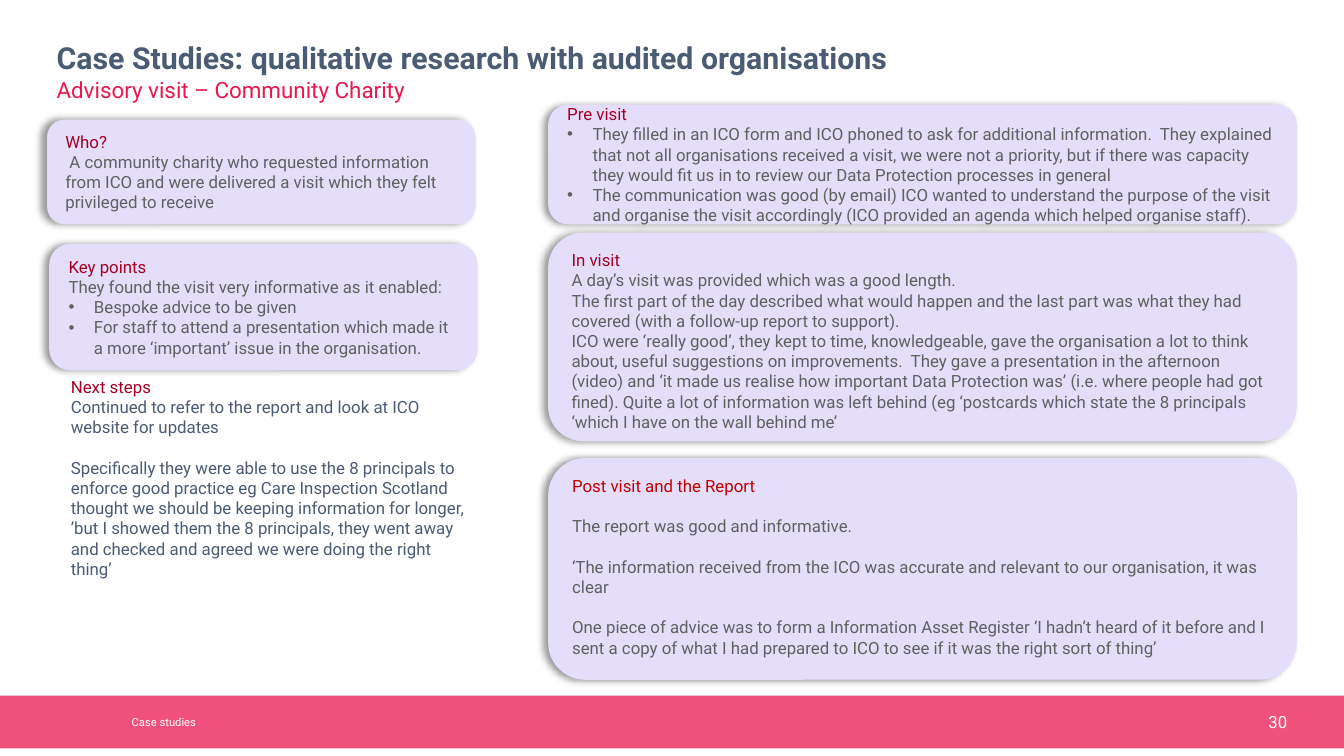
import pptx
import pptx.util
import pptx.dml.color
import pptx.enum.shapes
import pptx.enum.text
import pptx.oxml
import pptx.oxml.ns
from lxml import etree

Cm, Pt = pptx.util.Cm, pptx.util.Pt
RGB = pptx.dml.color.RGBColor
SHAPE = pptx.enum.shapes.MSO_SHAPE
ANCHOR = pptx.enum.text.MSO_ANCHOR
ALIGN = pptx.enum.text.PP_ALIGN
qn = pptx.oxml.ns.qn
NS = pptx.oxml.ns.nsdecls("a")

COLOURS = {
    "slate": "4A5B73",
    "pink": "EB174F",
    "crimson": "A50021",
    "red": "C00000",
    "grey": "606060",
    "lilac": "E4DEFB",
    "white": "FFFFFF",
}
SHADOW = (
    f'<a:effectLst {NS}><a:outerShdw blurRad="{Pt(4)}" dist="{Pt(3)}" dir="10800000" '
    'algn="r" rotWithShape="0"><a:srgbClr val="000000"><a:alpha val="40000"/>'
    "</a:srgbClr></a:outerShdw></a:effectLst>"
)
LINE_GAP = 10.8


def write(frame, text, colour="grey", size=9, bold=False, align=ALIGN.LEFT,
          bullet=False, gap=0, spacing=None):
    """Add one paragraph to the frame, using its empty first paragraph if there is one."""
    paragraph = frame.paragraphs[0] if not frame.text else frame.add_paragraph()
    paragraph.alignment = align
    if bullet:
        properties = paragraph._p.get_or_add_pPr()
        properties.set("marL", str(Cm(0.48)))
        properties.set("indent", str(-Cm(0.48)))
        etree.SubElement(properties, qn("a:buFont"), typeface="Arial")
        etree.SubElement(properties, qn("a:buChar"), char="•")
    if gap:
        paragraph.space_before = Pt(gap)
    if spacing:
        paragraph.line_spacing = spacing
    run = paragraph.add_run()
    run.text = text
    run.font.name = "Roboto"
    run.font.size = Pt(size)
    run.font.bold = bold
    run.font.color.rgb = RGB.from_string(COLOURS[colour])


def set_frame(frame, anchor, side=0.25, top=0.13):
    frame.word_wrap = True
    frame.auto_size = pptx.enum.text.MSO_AUTO_SIZE.NONE
    frame.vertical_anchor = anchor
    frame.margin_left = frame.margin_right = Cm(side)
    frame.margin_top = frame.margin_bottom = Cm(top)


deck = pptx.Presentation()
deck.slide_width, deck.slide_height = Cm(25.4), Cm(14.29)
slide = deck.slides.add_slide(deck.slide_layouts[5])

footer_band = slide.shapes.add_shape(SHAPE.RECTANGLE, 0, Cm(13.15), Cm(25.4), Cm(1))
footer_band.shadow.inherit = False
footer_band.line.fill.background()
footer_band.fill.solid()
footer_band.fill.fore_color.rgb = RGB.from_string(COLOURS["pink"])
band_colour = footer_band._element.spPr.find(".//" + qn("a:srgbClr"))
etree.SubElement(band_colour, qn("a:alpha"), val="75000")

title = slide.shapes.title
title.left, title.top, title.width, title.height = Cm(0.89), Cm(0.74), Cm(23.6), Cm(0.79)
set_frame(title.text_frame, ANCHOR.MIDDLE, 0.18, 0.1)
write(title.text_frame, "Case Studies: qualitative research with audited organisations",
      colour="slate", size=16.2, bold=True, spacing=0.9)

# Single lines: text, left, top, width, height, format
single_lines = [
    ("Advisory visit – Community Charity", 0.89, 1.35, 23.6, 0.76,
     {"colour": "pink", "size": 12, "spacing": 0.9}),
    ("Case studies", 2.31, 13.34, 20.19, 0.61, {"colour": "white", "size": 6}),
    ("30", 22.71, 13.34, 1.8, 0.61, {"colour": "white", "align": ALIGN.RIGHT}),
]
for text, left, top, width, height, text_format in single_lines:
    box = slide.shapes.add_textbox(Cm(left), Cm(top), Cm(width), Cm(height))
    set_frame(box.text_frame, ANCHOR.MIDDLE, 0.18, 0.1)
    write(box.text_frame, text, **text_format)

next_steps = slide.shapes.add_textbox(Cm(1.09), Cm(6.99), Cm(7.95), Cm(6.4)).text_frame
set_frame(next_steps, ANCHOR.TOP)
write(next_steps, "Next steps", colour="crimson")
write(next_steps, "Continued to refer to the report and look at ICO website for updates",
      colour="slate")
write(next_steps,
      "Specifically they were able to use the 8 principals to enforce good practice eg Care "
      "Inspection Scotland thought we should be keeping information for longer, ’but I showed "
      "them the 8 principals, they went away and checked and agreed we were doing the right thing’",
      colour="slate", gap=LINE_GAP)

BULLET = {"bullet": True}
SPACED = {"gap": LINE_GAP}

# Cards: heading, heading colour, left, top, width, height, anchor, paragraphs
cards = [
    ("Who?", "crimson", 0.89, 2.26, 8.1, 1.98, ANCHOR.MIDDLE, [
        (" A community charity who requested information from ICO and were delivered a visit "
         "which they felt privileged to receive", {}),
    ]),
    ("Key points", "crimson", 0.93, 4.61, 8.1, 2.39, ANCHOR.MIDDLE, [
        ("They found the visit very informative as it enabled:", {}),
        ("Bespoke advice to be given", BULLET),
        ("For staff to attend a presentation which made it a more ‘important’ issue in the "
         "organisation.", BULLET),
    ]),
    ("Pre visit", "crimson", 10.36, 1.98, 14.15, 2.26, ANCHOR.MIDDLE, [
        ("They filled in an ICO form and ICO phoned to ask for additional information.  They "
         "explained that not all organisations received a visit, we were not a priority, but if "
         "there was capacity they would fit us in to review our Data Protection processes in "
         "general", BULLET),
        ("The communication was good (by email) ICO wanted to understand the purpose of the "
         "visit and organise the visit accordingly (ICO provided an agenda which helped organise "
         "staff).", BULLET),
    ]),
    ("In visit", "crimson", 10.36, 4.4, 14.15, 3.94, ANCHOR.TOP, [
        ("A day’s visit was provided which was a good length.", {}),
        ("The first part of the day described what would happen and the last part was what they "
         "had covered (with a follow-up report to support).", {}),
        ("ICO were ‘really good’, they kept to time, knowledgeable, gave the organisation a lot "
         "to think about, useful suggestions on improvements.  They gave a presentation in the "
         "afternoon (video) and ‘it made us realise how important Data Protection was’ (i.e. "
         "where people had got fined). Quite a lot of information was left behind (eg ‘postcards "
         "which state the 8 principals ‘which I have on the wall behind me’", {}),
    ]),
    ("Post visit and the Report", "red", 10.36, 8.66, 14.15, 4.19, ANCHOR.TOP, [
        ("The report was good and informative.", SPACED),
        ("‘The information received from the ICO was accurate and relevant to our organisation, "
         "it was clear", SPACED),
        ("One piece of advice was to form a Information Asset Register ‘I hadn’t heard of it "
         "before and I sent a copy of what I had prepared to ICO to see if it was the right sort "
         "of thing’", SPACED),
    ]),
]
for heading, heading_colour, left, top, width, height, anchor, paragraphs in cards:
    card = slide.shapes.add_shape(SHAPE.ROUNDED_RECTANGLE, Cm(left), Cm(top), Cm(width), Cm(height))
    card.fill.solid()
    card.fill.fore_color.rgb = RGB.from_string(COLOURS["lilac"])
    card.line.fill.background()
    card._element.spPr.append(pptx.oxml.parse_xml(SHADOW))
    set_frame(card.text_frame, anchor)
    write(card.text_frame, heading, colour=heading_colour)
    for text, text_format in paragraphs:
        write(card.text_frame, text, **text_format)

deck.save("out.pptx")
